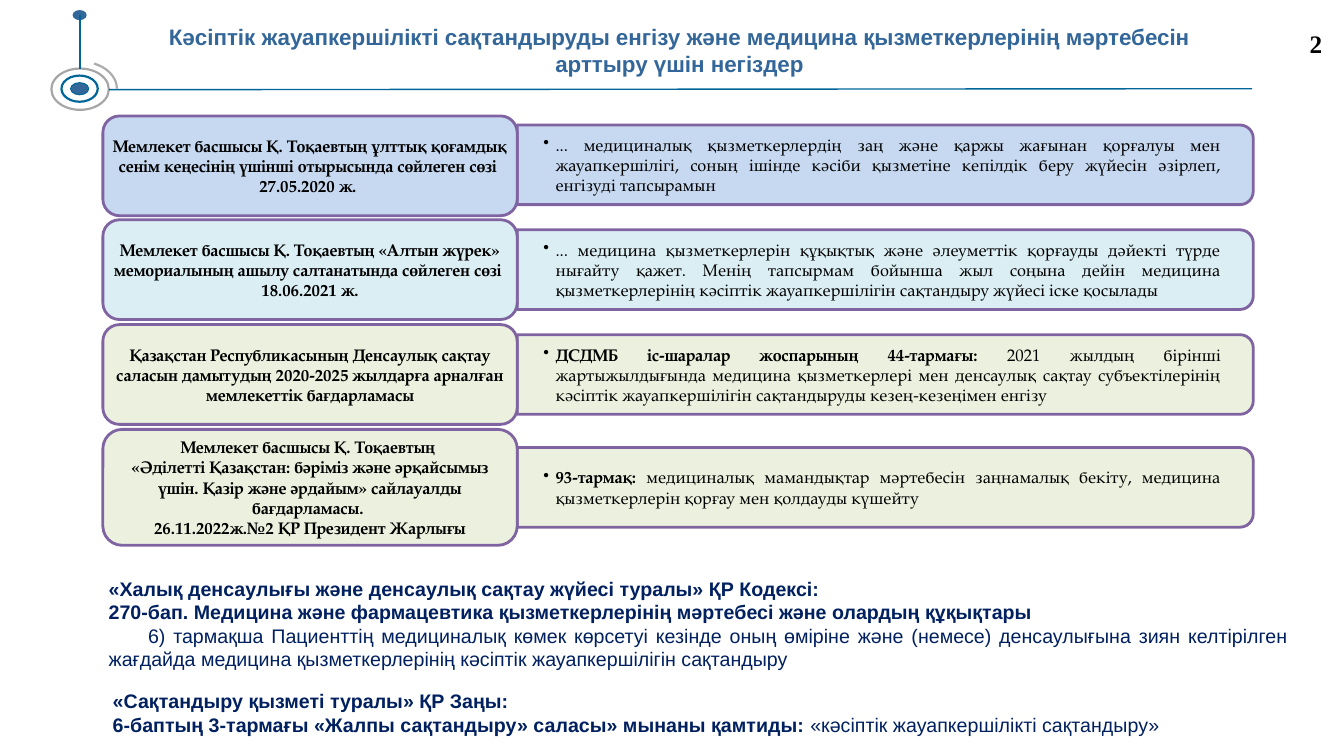
"""Builds the slide on the grounds for professional liability insurance of medical workers."""
from dataclasses import dataclass

import pptx
import pptx.dml.color
import pptx.enum.shapes
import pptx.enum.text
import pptx.oxml
import pptx.oxml.ns
import pptx.util
from pptx.util import Inches

SHAPE = pptx.enum.shapes.MSO_SHAPE
ALIGN = pptx.enum.text.PP_ALIGN
ANCHOR = pptx.enum.text.MSO_ANCHOR
BLUE, TEAL, NAVY, PURPLE, BLACK = "336699", "006699", "002060", "8064A2", "000000"
SERIF = "TeX Gyre Pagella"


@dataclass
class Run:
    text: str
    bold: bool = False


@dataclass
class Ground:
    top: float
    height: float
    bar_top: float
    fill: str
    source: list[str]
    quote: list[Run]


@dataclass
class Ring:
    left: float
    top: float
    width: float
    height: float
    fill: str | None
    line: str | None
    weight: float


GROUNDS = [
    Ground(1.15, 0.99, 1.24, "C6D9F1",
           ["Мемлекет басшысы Қ. Тоқаевтың ұлттық қоғамдық сенім кеңесінің үшінші отырысында сөйлеген сөзі ",
            "27.05.2020 ж. "],
           [Run("... медициналық қызметкерлердің заң және қаржы жағынан қорғалуы мен жауапкершілігі, соның ішінде "
                "кәсіби қызметіне кепілдік беру жүйесін әзірлеп, енгізуді тапсырамын")]),
    Ground(2.18, 0.99, 2.28, "DBEEF4",
           ["Мемлекет басшысы Қ. Тоқаевтың «Алтын жүрек» мемориалының ашылу салтанатында сөйлеген сөзі ",
            "18.06.2021 ж."],
           [Run("... медицина қызметкерлерін құқықтық және әлеуметтік қорғауды дәйекті түрде нығайту қажет. "
                "Менің тапсырмам бойынша жыл соңына дейін медицина қызметкерлерінің кәсіптік жауапкершілігін "
                "сақтандыру жүйесі іске қосылады")]),
    Ground(3.22, 0.99, 3.32, "EBF1DE",
           ["Қазақстан Республикасының Денсаулық сақтау саласын дамытудың 2020-2025 жылдарға арналған "
            "мемлекеттік бағдарламасы"],
           [Run("ДСДМБ іс-шаралар жоспарының 44-тармағы:", True),
            Run(" 2021 жылдың бірінші жартыжылдығында медицина қызметкерлері мен денсаулық сақтау "
                "субъектілерінің кәсіптік жауапкершілігін сақтандыруды кезең-кезеңімен енгізу")]),
    Ground(4.26, 1.15, 4.44, "EBF1DE",
           ["Мемлекет басшысы Қ. Тоқаевтың ",
            "«Әділетті Қазақстан: бәріміз және әрқайсымыз үшін. Қазір және әрдайым» сайлауалды бағдарламасы. ",
            "26.11.2022ж.№2 ҚР Президент Жарлығы"],
           [Run("93-тармақ:", True),
            Run(" медициналық мамандықтар мәртебесін заңнамалық бекіту, медицина қызметкерлерін қорғау мен "
                "қолдауды күшейту ")]),
]

RINGS = [
    Ring(0.7, 0.82, 0.18, 0.12, BLUE, TEAL, 0.75),
    Ring(0.61, 0.75, 0.36, 0.26, None, TEAL, 1.56),
    Ring(0.51, 0.68, 0.57, 0.41, None, "A6A6A6", 1.56),
    Ring(0.72, 0.1, 0.14, 0.1, BLUE, None, 0),
]

CODE = [
    [Run("«Халық денсаулығы және денсаулық сақтау жүйесі туралы» ҚР Кодексі:", True)],
    [Run("270-бап. Медицина және фармацевтика қызметкерлерінің мәртебесі және олардың құқықтары", True)],
    [Run("6) тармақша Пациенттің медициналық көмек көрсетуі кезінде оның өміріне және (немесе) денсаулығына "
         "зиян келтірілген жағдайда медицина қызметкерлерінің кәсіптік жауапкершілігін сақтандыру")],
]
LAW = [
    [Run("«Сақтандыру қызметі туралы» ҚР Заңы:", True)],
    [Run("6-баптың 3-тармағы «Жалпы сақтандыру» саласы» мынаны қамтиды: ", True),
     Run("«кәсіптік жауапкершілікті сақтандыру» ")],
]


def rgb(value: str) -> pptx.dml.color.RGBColor:
    """Turn a hex string into a colour."""
    return pptx.dml.color.RGBColor.from_string(value)


def paint(sp, fill: str | None, line: str | None, weight: float) -> None:
    """Set the fill and outline of a shape and drop its shadow."""
    sp.shadow.inherit = False
    if fill:
        sp.fill.solid()
        sp.fill.fore_color.rgb = rgb(fill)
    else:
        sp.fill.background()
    if line:
        sp.line.color.rgb = rgb(line)
        sp.line.width = pptx.util.Pt(weight)
    else:
        sp.line.fill.background()


def write(sp, paragraphs: list[list[Run]], size: float, font: str, color: str, align=ALIGN.LEFT,
          anchor=ANCHOR.TOP, insets: tuple[float, float] = (0.1, 0.05), wrap: bool = True) -> None:
    """Fill a shape with paragraphs of formatted runs."""
    tf = sp.text_frame
    tf.word_wrap = wrap
    tf.vertical_anchor = anchor
    tf.margin_left = tf.margin_right = Inches(insets[0])
    tf.margin_top = tf.margin_bottom = Inches(insets[1])
    for i, runs in enumerate(paragraphs):
        p = tf.paragraphs[0] if i == 0 else tf.add_paragraph()
        p.alignment = align
        for run in runs:
            r = p.add_run()
            r.text = run.text
            r.font.size = pptx.util.Pt(size)
            r.font.name = font
            r.font.bold = run.bold
            r.font.color.rgb = rgb(color)


def indent(p, left: float, first: float, bullet: str = "") -> None:
    """Set the indents of a paragraph and, if given, its bullet."""
    pPr = p._p.get_or_add_pPr()
    pPr.set("marL", str(Inches(left)))
    pPr.set("indent", str(Inches(first)))
    if bullet:
        pptx.oxml.ns.qn("a:buChar")
        bu = pptx.oxml.parse_xml(f'<a:buChar {pptx.oxml.ns.nsdecls("a")} char="{bullet}"/>')
        pPr.append(bu)


def add_line(s, x1: float, y1: float, x2: float, y2: float, weight: float) -> None:
    """Draw a straight teal line without shadow."""
    ln = s.shapes.add_connector(pptx.enum.shapes.MSO_CONNECTOR.STRAIGHT,
                                Inches(x1), Inches(y1), Inches(x2), Inches(y2))
    ln.line.color.rgb = rgb(TEAL)
    ln.line.width = pptx.util.Pt(weight)
    ln._element.spPr.append(pptx.oxml.parse_xml(f'<a:effectLst {pptx.oxml.ns.nsdecls("a")}/>'))


def add_emblem(s) -> None:
    """Draw the ringed ornament and the rule under the title."""
    arc = s.shapes.add_shape(SHAPE.ARC, Inches(0.42), Inches(0.61), Inches(0.74), Inches(0.54))
    arc.adjustments[0], arc.adjustments[1] = 180, -90
    paint(arc, None, "ACACAC", 1.56)
    for ring in RINGS:
        sp = s.shapes.add_shape(SHAPE.OVAL, Inches(ring.left), Inches(ring.top),
                                Inches(ring.width), Inches(ring.height))
        paint(sp, ring.fill, ring.line, ring.weight)
    add_line(s, 0.79, 0.15, 0.79, 0.68, 1.56)
    add_line(s, 1.08, 0.89, 12.42, 0.88, 1)


def add_ground(s, ground: Ground) -> None:
    """Draw one row: the quotation bar and the box naming its source."""
    length, depth, left = 7.3, 0.79, 5.13
    bar = s.shapes.add_shape(SHAPE.ROUND_2_SAME_RECTANGLE, Inches(left + (length - depth) / 2),
                             Inches(ground.bar_top - (length - depth) / 2), Inches(depth), Inches(length))
    bar.rotation = 90
    paint(bar, ground.fill, PURPLE, 2)
    tb = s.shapes.add_textbox(Inches(5.12), Inches(ground.bar_top + 0.04), Inches(7.26), Inches(0.71))
    write(tb, [ground.quote], 12, SERIF, BLACK, ALIGN.JUSTIFY, ANCHOR.MIDDLE, (0.27, 0.14))
    indent(tb.text_frame.paragraphs[0], 0.12, -0.12, "•")
    box = s.shapes.add_shape(SHAPE.ROUNDED_RECTANGLE, Inches(1.02), Inches(ground.top),
                             Inches(4.11), Inches(ground.height))
    paint(box, ground.fill, PURPLE, 2)
    write(box, [[Run(text, True)] for text in ground.source], 12, SERIF, BLACK,
          ALIGN.CENTER, ANCHOR.MIDDLE, (0.05, 0.03))


def add_note(s, left: float, top: float, width: float, height: float, paragraphs: list[list[Run]]):
    """Add a navy legal reference below the rows and return it."""
    tb = s.shapes.add_textbox(Inches(left), Inches(top), Inches(width), Inches(height))
    write(tb, paragraphs, 14, "Arial", NAVY, ALIGN.JUSTIFY)
    return tb


def main() -> None:
    """Build and save the slide."""
    prs = pptx.Presentation()
    prs.slide_width, prs.slide_height = Inches(13.33), Inches(7.5)
    s = prs.slides.add_slide(prs.slide_layouts[5])
    title = s.shapes.title
    title.left, title.top, title.width, title.height = Inches(1.18), Inches(0.1), Inches(11.12), Inches(0.79)
    write(title, [[Run("Кәсіптік жауапкершілікті сақтандыруды енгізу және медицина қызметкерлерінің мәртебесін "
                       "арттыру үшін негіздер", True)]], 16, "Arial", BLUE, ALIGN.CENTER, ANCHOR.MIDDLE)
    add_emblem(s)
    code = add_note(s, 0.98, 5.67, 11.9, 1.04, CODE)
    indent(code.text_frame.paragraphs[2], 0, 0.39)
    add_note(s, 1.02, 6.79, 11.93, 0.57, LAW)
    for ground in GROUNDS:
        add_ground(s, ground)
    number = s.shapes.add_textbox(Inches(12.89), Inches(0.23), Inches(0.33), Inches(0.4))
    write(number, [[Run("2", True)]], 18, "Times New Roman", BLACK, wrap=False)
    prs.save("out.pptx")


if __name__ == "__main__":
    main()
